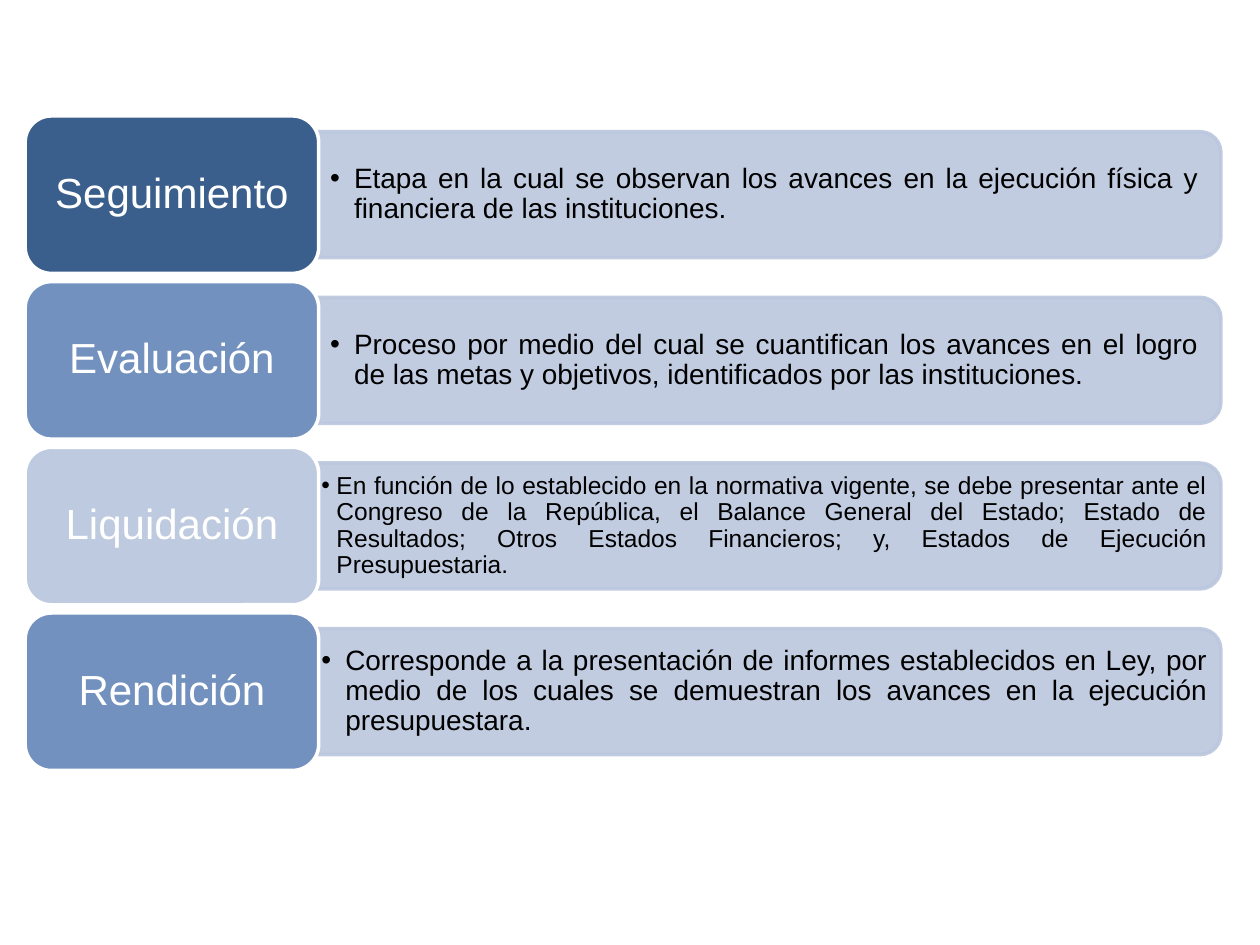
import pptx
import pptx.util
import pptx.dml.color
import pptx.enum.shapes
import pptx.enum.text
import pptx.oxml.ns
import lxml.etree

Inches = pptx.util.Inches
Pt = pptx.util.Pt
RGBColor = pptx.dml.color.RGBColor
MSO_SHAPE = pptx.enum.shapes.MSO_SHAPE
MSO_ANCHOR = pptx.enum.text.MSO_ANCHOR
PP_ALIGN = pptx.enum.text.PP_ALIGN
qn = pptx.oxml.ns.qn

WHITE = RGBColor(0xFF, 0xFF, 0xFF)
BLACK = RGBColor(0x00, 0x00, 0x00)
NAVY = RGBColor(0x3A, 0x5F, 0x8C)
BLUE = RGBColor(0x73, 0x91, 0xBF)
PALE = RGBColor(0xBE, 0xCA, 0xDF)
PANEL = RGBColor(0xBB, 0xC7, 0xDE)

FONT = "Arial"
FIRST_TOP = 0.92
ROW_PITCH = 1.315
LABEL_LEFT, LABEL_WIDTH, LABEL_HEIGHT = 0.2, 2.33, 1.25
PANEL_LEFT, PANEL_WIDTH, PANEL_HEIGHT = 2.49, 7.2, 1
TEXT_WIDTH, TEXT_HEIGHT = 7.15, 0.9

STAGES = [
    ("Seguimiento", NAVY, 16, 0.19, 0.13,
     "Etapa en la cual se observan los avances en la ejecución física y "
     "financiera de las instituciones."),
    ("Evaluación", BLUE, 16, 0.19, 0.13,
     "Proceso por medio del cual se cuantifican los avances en el logro de "
     "las metas y objetivos, identificados por las instituciones."),
    ("Liquidación", PALE, 14, 0.12, 0.06,
     "En función de lo establecido en la normativa vigente, se debe presentar "
     "ante el Congreso de la República, el Balance General del Estado; Estado "
     "de Resultados; Otros Estados Financieros; y, Estados de Ejecución "
     "Presupuestaria."),
    ("Rendición", BLUE, 16, 0.19, 0.06,
     "Corresponde a la presentación de informes establecidos en Ley, por medio "
     "de los cuales se demuestran los avances en la ejecución presupuestara."),
]


def add_box(s, kind, left, top, width, height, fill, line):
    sp = s.shapes.add_shape(kind, Inches(left), Inches(top),
                            Inches(width), Inches(height))
    sp.shadow.inherit = False
    sp.fill.solid()
    sp.fill.fore_color.rgb = fill
    sp.line.color.rgb = line
    sp.line.width = Pt(2)
    return sp


def write_text(sp, text, size, color, align):
    tf = sp.text_frame
    tf.word_wrap = True
    tf.vertical_anchor = MSO_ANCHOR.MIDDLE
    tf.text = text
    p = tf.paragraphs[0]
    p.alignment = align
    p.line_spacing = 0.9
    r = p.runs[0]
    r.font.name = FONT
    r.font.size = Pt(size)
    r.font.color.rgb = color
    return p


def add_bullet(p, indent):
    p.level = 1
    pPr = p._p.get_or_add_pPr()
    pPr.set("marL", str(Inches(indent)))
    pPr.set("indent", str(-Inches(indent)))
    lxml.etree.SubElement(pPr, qn("a:buFont")).set("typeface", FONT)
    lxml.etree.SubElement(pPr, qn("a:buChar")).set("char", "•")


def add_panel(s, middle):
    left = PANEL_LEFT + (PANEL_WIDTH - PANEL_HEIGHT) / 2
    sp = add_box(s, MSO_SHAPE.ROUND_2_SAME_RECTANGLE, left,
                 middle - PANEL_WIDTH / 2, PANEL_HEIGHT, PANEL_WIDTH, PANEL, PANEL)
    sp.rotation = 90
    for color in sp._element.spPr.iter(qn("a:srgbClr")):
        lxml.etree.SubElement(color, qn("a:alpha")).set("val", "90000")


def add_description(s, middle, text, size, indent, inset):
    sp = s.shapes.add_textbox(Inches(PANEL_LEFT), Inches(middle - TEXT_HEIGHT / 2),
                              Inches(TEXT_WIDTH), Inches(TEXT_HEIGHT))
    tf = sp.text_frame
    tf.margin_left = tf.margin_right = Inches(inset)
    tf.margin_top = tf.margin_bottom = Inches(inset / 2)
    p = write_text(sp, text, size, BLACK, PP_ALIGN.JUSTIFY)
    add_bullet(p, indent)


def add_label(s, middle, text, fill):
    sp = add_box(s, MSO_SHAPE.ROUNDED_RECTANGLE, LABEL_LEFT,
                 middle - LABEL_HEIGHT / 2, LABEL_WIDTH, LABEL_HEIGHT, fill, WHITE)
    write_text(sp, text, 24, WHITE, PP_ALIGN.CENTER)


def main():
    prs = pptx.Presentation()
    prs.slide_width = Inches(10)
    prs.slide_height = Inches(7.5)
    s = prs.slides.add_slide(prs.slide_layouts[6])
    for i, (name, fill, size, indent, inset, text) in enumerate(STAGES):
        middle = FIRST_TOP + i * ROW_PITCH + LABEL_HEIGHT / 2
        add_panel(s, middle)
        add_description(s, middle, text, size, indent, inset)
        add_label(s, middle, name, fill)
    prs.save("out.pptx")


if __name__ == "__main__":
    main()
